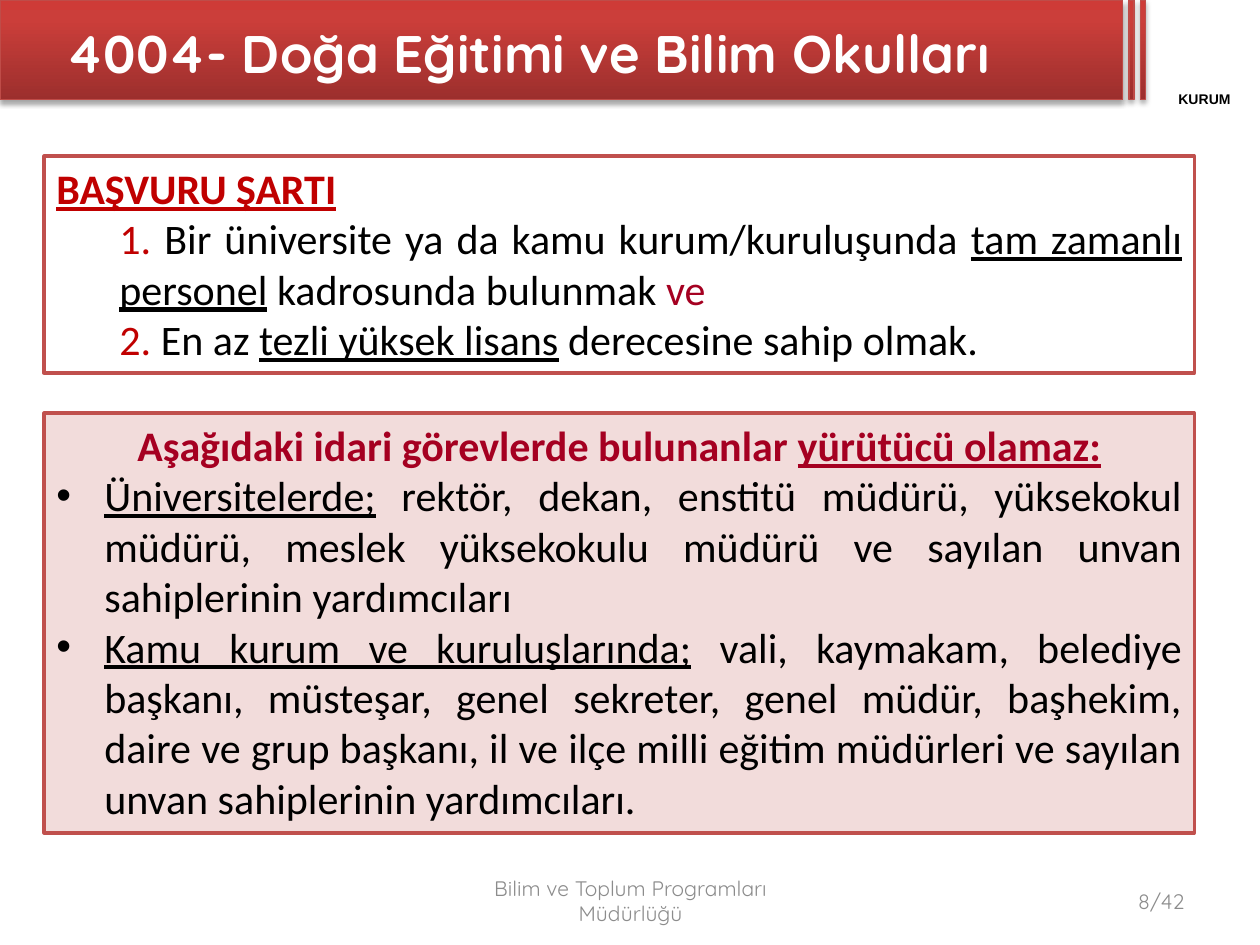
from copy import deepcopy

from lxml import etree
from pptx import Presentation
from pptx.dml.color import RGBColor
from pptx.enum.shapes import MSO_SHAPE
from pptx.enum.text import MSO_ANCHOR, PP_ALIGN
from pptx.oxml.ns import qn
from pptx.util import Inches, Pt

RECTANGLE = MSO_SHAPE.RECTANGLE
TOP, MIDDLE = MSO_ANCHOR.TOP, MSO_ANCHOR.MIDDLE
LEFT, CENTER, RIGHT, JUSTIFY = (
    PP_ALIGN.LEFT, PP_ALIGN.CENTER, PP_ALIGN.RIGHT, PP_ALIGN.JUSTIFY)

BLACK, WHITE, GRAY = "000000", "FFFFFF", "8C8C8C"
RED, CRIMSON, BORDER, PINK = "C00000", "A50021", "C0504D", "F2DCDB"
BAND_STOPS = [(0, "9C2F2D"), (0.8, "CB3E3A"), (1, "CE3B37")]


def rgb(value):
    return RGBColor.from_string(value)


def style(font, name, size, color, bold=False, underline=False):
    font.name, font.size, font.bold = name, Pt(size), bold
    font.underline = underline
    font.color.rgb = rgb(color)


def add_label(slide, box, text, align, name, size, color, bold=False, margin=None):
    label = slide.shapes.add_textbox(*map(Inches, box))
    frame = label.text_frame
    frame.word_wrap = True
    frame.vertical_anchor = MIDDLE
    if margin is not None:
        frame.margin_left = frame.margin_right = Inches(margin)
        frame.margin_top = frame.margin_bottom = Inches(margin)
    frame.text = text
    paragraph = frame.paragraphs[0]
    paragraph.alignment = align
    style(paragraph.runs[0].font, name, size, color, bold)


def add_band(slide, box):
    """Red gradient bar with a soft shadow below."""
    band = slide.shapes.add_shape(RECTANGLE, *map(Inches, box))
    band.fill.gradient()
    stop_list = band._element.spPr.find(qn("a:gradFill")).find(qn("a:gsLst"))
    stop_list.append(deepcopy(stop_list[-1]))
    band.fill.gradient_angle = 90
    for stop, (position, color) in zip(band.fill.gradient_stops, BAND_STOPS):
        stop.position = position
        stop.color.rgb = rgb(color)
    band.line.color.rgb = rgb("BF4C48")
    band.line.width = Pt(0.75)
    band.shadow.inherit = False
    effects = band._element.spPr.find(qn("a:effectLst"))
    shadow = etree.SubElement(
        effects, qn("a:outerShdw"), blurRad=str(Pt(3.1)), dist=str(Pt(1.8)),
        dir="5400000", rotWithShape="0")
    shadow_color = etree.SubElement(shadow, qn("a:srgbClr"), val=BLACK)
    etree.SubElement(shadow_color, qn("a:alpha"), val="35000")


def add_header(slide, box):
    left, top, width, height = box
    add_band(slide, (left, top, width, height))
    for stripe in range(2):
        add_band(slide, (left + width + 0.05 + 0.09 * stripe, top, 0.04, height))
    add_label(slide, (left + 0.43, top + 0.03, 8.5, 0.77),
              "4004- Doğa Eğitimi ve Bilim Okulları",
              LEFT, "Quicksand", 30.2, WHITE, bold=True)
    # Institution label under the stripes
    add_label(slide, (left + 9.05, top + 0.72, 1.02, 0.13), "KURUM",
              CENTER, "Arial", 8, BLACK, bold=True, margin=0)


def add_panel(slide, box, fill, paragraphs):
    """Each paragraph: alignment, left indent, bullet flag, runs.

    Each run: text, colour, bold, underline."""
    panel = slide.shapes.add_shape(RECTANGLE, *map(Inches, box))
    panel.shadow.inherit = False
    panel.fill.solid()
    panel.fill.fore_color.rgb = rgb(fill)
    panel.line.color.rgb = rgb(BORDER)
    panel.line.width = Pt(2)
    frame = panel.text_frame
    frame.word_wrap = True
    frame.vertical_anchor = TOP
    for index, (align, indent, bulleted, runs) in enumerate(paragraphs):
        paragraph = frame.add_paragraph() if index else frame.paragraphs[0]
        paragraph.alignment = align
        properties = paragraph._p.get_or_add_pPr()
        properties.set("marL", str(Inches(indent)))
        properties.set("indent", str(-Inches(indent) if bulleted else 0))
        if bulleted:
            etree.SubElement(properties, qn("a:buFont"), typeface="Arial")
            etree.SubElement(properties, qn("a:buChar"), char="•")
        for text, color, bold, underline in runs:
            run = paragraph.add_run()
            run.text = text
            style(run.font, "Calibri", 24, color, bold, underline)


def add_footer(slide, box):
    left, top, width, height = box
    add_label(slide, (left + 3.07, top, 3.17, height),
              "Bilim ve Toplum Programları Müdürlüğü",
              CENTER, "Quicksand", 12, GRAY)
    add_label(slide, (left + width - 2.33, top, 2.33, height), "8/42",
              RIGHT, "Quicksand", 12, GRAY)


REQUIREMENTS = [
    (LEFT, 0, False, [("BAŞVURU ŞARTI", RED, True, True)]),
    (JUSTIFY, 0.5, False, [
        ("1. ", RED, False, False),
        ("Bir üniversite ya da kamu kurum/kuruluşunda ", BLACK, False, False),
        ("tam zamanlı personel", BLACK, False, True),
        (" kadrosunda bulunmak ", BLACK, False, False),
        ("ve", CRIMSON, False, False)]),
    (JUSTIFY, 0.5, False, [
        ("2. ", RED, False, False),
        ("En az ", BLACK, False, False),
        ("tezli yüksek lisans", BLACK, False, True),
        (" derecesine sahip olmak.", BLACK, False, False)]),
]

EXCLUSIONS = [
    (CENTER, 0, False, [
        ("Aşağıdaki idari görevlerde bulunanlar ", CRIMSON, True, False),
        ("yürütücü olamaz:", CRIMSON, True, True)]),
    (JUSTIFY, 0.38, True, [
        ("Üniversitelerde;", BLACK, False, True),
        (" rektör, dekan, enstitü müdürü, yüksekokul müdürü, meslek "
         "yüksekokulu müdürü ve sayılan unvan sahiplerinin yardımcıları",
         BLACK, False, False)]),
    (JUSTIFY, 0.38, True, [
        ("Kamu kurum ve kuruluşlarında;", BLACK, False, True),
        (" vali, kaymakam, belediye başkanı, müsteşar, genel sekreter, genel "
         "müdür, başhekim, daire ve grup başkanı, il ve ilçe milli eğitim "
         "müdürleri ve sayılan unvan sahiplerinin yardımcıları.",
         BLACK, False, False)]),
]


def main():
    presentation = Presentation()
    presentation.slide_width, presentation.slide_height = Inches(10), Inches(7.5)
    slide = presentation.slides.add_slide(presentation.slide_layouts[6])
    add_header(slide, (0, 0, 8.91, 0.79))
    add_panel(slide, (0.35, 1.24, 9.13, 1.72), WHITE, REQUIREMENTS)
    add_panel(slide, (0.35, 3.28, 9.13, 3.33), PINK, EXCLUSIONS)
    add_footer(slide, (0.35, 6.95, 9.15, 0.4))
    presentation.save("out.pptx")


if __name__ == "__main__":
    main()
